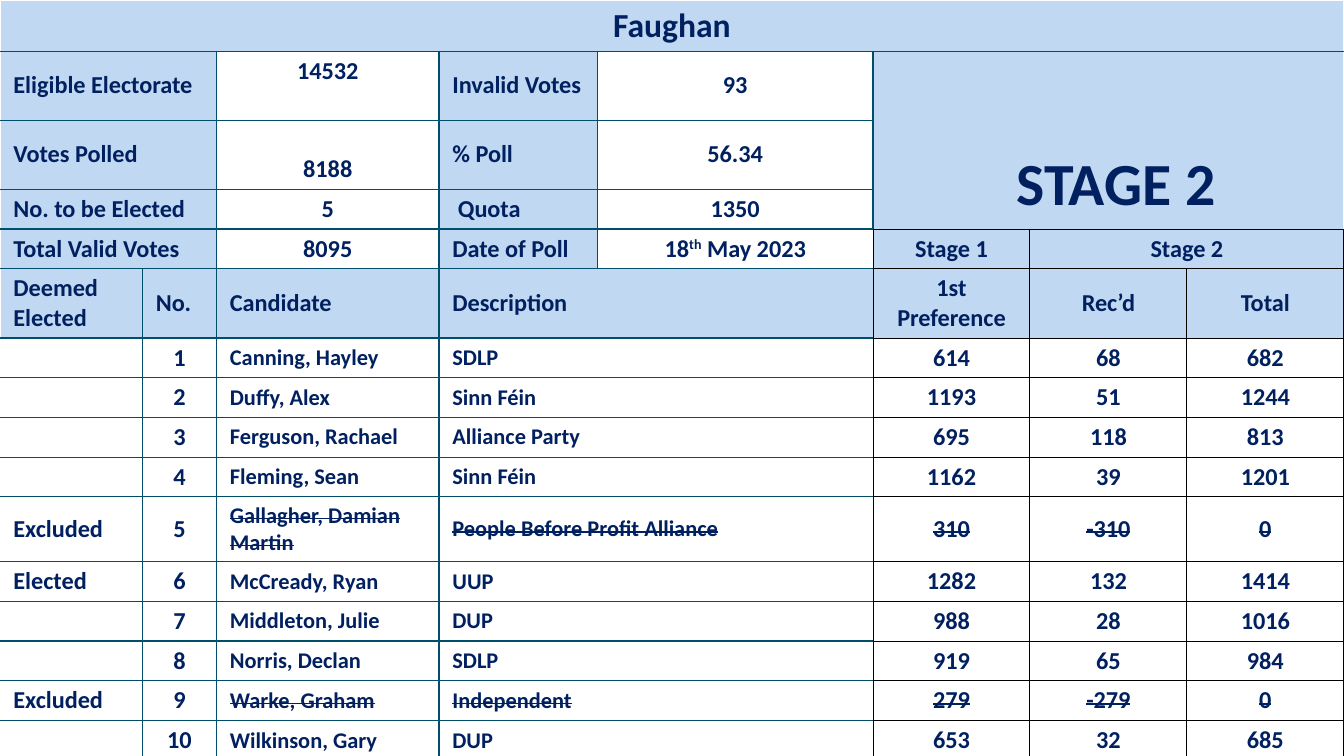
import dataclasses
import pptx
import pptx.util
import pptx.dml.color
import pptx.enum.text
import pptx.oxml.ns
import lxml.etree

Pt = pptx.util.Pt
Align = pptx.enum.text.PP_ALIGN
Anchor = pptx.enum.text.MSO_ANCHOR

HUES = {"ink": "002060", "head": "C1D8F2", "plain": "FFFFFF", "T": "004E6C",
        "W": "FFFFFF", "K": "000000", "dark": "0D3868", "sky": "8ADFFF"}
WIDTHS = {"T": 0.75, "W": 1, "K": 0.5}
COLS = [76.3, 39.7, 119.2, 84.9, 147.6] + [84.1] * 3
ROW = 21.3
TALL = {0: 27.3, 1: 37, 2: 37, 5: 37, 10: 34.3}
FACTS = [
    ("Eligible Electorate", "14532", "Invalid Votes", "93"),
    ("Votes Polled", "8188", "% Poll", "56.34"),
    ("No. to be Elected", "5", " Quota", "1350"),
    ("Total Valid Votes", "8095", "Date of Poll", "18^th^ May 2023"),
]
VOTES = [
    ("", "Canning, Hayley", "SDLP", 614, 68, 682),
    ("", "Duffy, Alex", "Sinn Féin", 1193, 51, 1244),
    ("", "Ferguson, Rachael", "Alliance Party", 695, 118, 813),
    ("", "Fleming, Sean", "Sinn Féin", 1162, 39, 1201),
    ("Excluded", "Gallagher, Damian Martin", "People Before Profit Alliance", 310, -310, 0),
    ("Elected", "McCready, Ryan", "UUP", 1282, 132, 1414),
    ("", "Middleton, Julie", "DUP", 988, 28, 1016),
    ("", "Norris, Declan", "SDLP", 919, 65, 984),
    ("Excluded", "Warke, Graham", "Independent", 279, -279, 0),
    ("", "Wilkinson, Gary", "DUP", 653, 32, 685),
]


@dataclasses.dataclass
class Box:
    row: int
    col: int
    text: str
    edges: str = "TTTT"
    fill: str = "plain"
    mid: bool = True
    size: float = 13
    wide: int = 1
    high: int = 1
    anchor: Anchor = Anchor.MIDDLE
    strike: bool = False
    lead: float = 0


def shade(hue: str) -> pptx.dml.color.RGBColor:
    """Return the named colour."""
    return pptx.dml.color.RGBColor.from_string(HUES[hue])


def border(cell, edges: str) -> None:
    """Draw left, right, top and bottom lines from a left-top-right-bottom code."""
    props = cell._tc.get_or_add_tcPr()
    for side, key in zip("LRTB", (edges[0], edges[2], edges[1], edges[3])):
        line = lxml.etree.SubElement(props, pptx.oxml.ns.qn(f"a:ln{side}"), w=str(Pt(WIDTHS[key])))
        solid = lxml.etree.SubElement(line, pptx.oxml.ns.qn("a:solidFill"))
        lxml.etree.SubElement(solid, pptx.oxml.ns.qn("a:srgbClr"), val=HUES[key])


def write(para, box: Box) -> None:
    """Write the text, raising any part held between carets."""
    para.alignment = Align.CENTER if box.mid else Align.LEFT
    if not box.text:
        para._p.get_or_add_endParaRPr().set("sz", str(int(box.size * 100)))
        return
    for spot, part in enumerate(box.text.split("^")):
        run = para.add_run()
        run.text = part
        size = box.lead if box.lead and part == " " else box.size
        for name, value in {"name": "Calibri", "size": Pt(size), "bold": True}.items():
            setattr(run.font, name, value)
        run.font.color.rgb = shade("ink")
        if spot % 2 and not box.lead:
            run.font._element.set("baseline", "30000")
        if box.strike:
            run.font._element.set("strike", "sngStrike")


def draw(table, box: Box) -> None:
    """Fill one cell of the table."""
    cell = table.cell(box.row, box.col)
    if box.wide * box.high > 1:
        cell.merge(table.cell(box.row + box.high - 1, box.col + box.wide - 1))
    border(cell, box.edges)
    cell.fill.solid()
    cell.fill.fore_color.rgb = shade(box.fill)
    look = {"margin_left": Pt(7.2), "margin_right": Pt(7.2), "margin_top": Pt(2.7),
            "margin_bottom": Pt(2.7), "vertical_anchor": box.anchor}
    for name, value in look.items():
        setattr(cell, name, value)
    write(cell.text_frame.paragraphs[0], box)


def heads() -> list[Box]:
    """List the cells above the votes."""
    boxes = [Box(0, 0, "Faughan", "WWWT", "head", size=18, wide=8),
             Box(1, 5, " ^STAGE 2", "TTWK", "head", size=32, wide=3, high=3,
                 anchor=Anchor.BOTTOM, lead=36),
             Box(4, 5, "Stage 1", "KKKK", "head"),
             Box(4, 6, "Stage 2", "KKKK", "head", wide=2)]
    spots = {1: Anchor.TOP, 2: Anchor.BOTTOM}
    for row, (left, count, right, value) in enumerate(FACTS, 1):
        boxes += [Box(row, 0, left, "WTTT", "head", False, wide=2),
                  Box(row, 2, count, anchor=spots.get(row, Anchor.MIDDLE)),
                  Box(row, 3, right, fill="head", mid=False),
                  Box(row, 4, value, "TTKT" if row == 4 else "TTTT")]
    boxes += [Box(5, 0, "Deemed Elected", "WTTT", "head", False),
              Box(5, 1, "No.", fill="head", mid=False),
              Box(5, 2, "Candidate", fill="head", mid=False),
              Box(5, 3, "Description", "TTKT", "head", False, wide=2)]
    names = ("1st Preference", "Rec’d", "Total")
    return boxes + [Box(5, col, name, "KKKK", "head") for col, name in enumerate(names, 5)]


def votes() -> list[Box]:
    """List the cells of each candidate."""
    boxes = []
    for rank, (state, name, party, *counts) in enumerate(VOTES, 1):
        row, out = rank + 5, state == "Excluded"
        boxes += [Box(row, 0, state, "WTTT", mid=False), Box(row, 1, str(rank)),
                  Box(row, 2, name, mid=False, size=12, strike=out),
                  Box(row, 3, party, "TTKT", mid=False, size=12, wide=2, strike=out)]
        boxes += [Box(row, col, str(count), "KKKK", strike=out)
                  for col, count in enumerate(counts, 5)]
    return boxes


def main() -> None:
    """Build the slide of election results."""
    deck = pptx.Presentation()
    deck.slide_width, deck.slide_height = Pt(720), Pt(405)
    slide = deck.slides.add_slide(deck.slide_layouts[6])
    back = slide.background.fill
    back.gradient()
    back.gradient_angle = 258
    for stop, (hue, place) in zip(back.gradient_stops, (("dark", 0.42), ("sky", 0.82))):
        stop.color.rgb = shade(hue)
        stop.position = place
    rows = [TALL.get(row, ROW) for row in range(6 + len(VOTES))]
    table = slide.shapes.add_table(len(rows), len(COLS), 0, 0, Pt(720), Pt(sum(rows))).table
    table.first_row = table.horz_banding = False
    for col, width in zip(table.columns, COLS):
        col.width = Pt(width)
    for row, height in zip(table.rows, rows):
        row.height = Pt(height)
    for box in heads() + votes():
        draw(table, box)
    deck.save("out.pptx")


if __name__ == "__main__":
    main()
